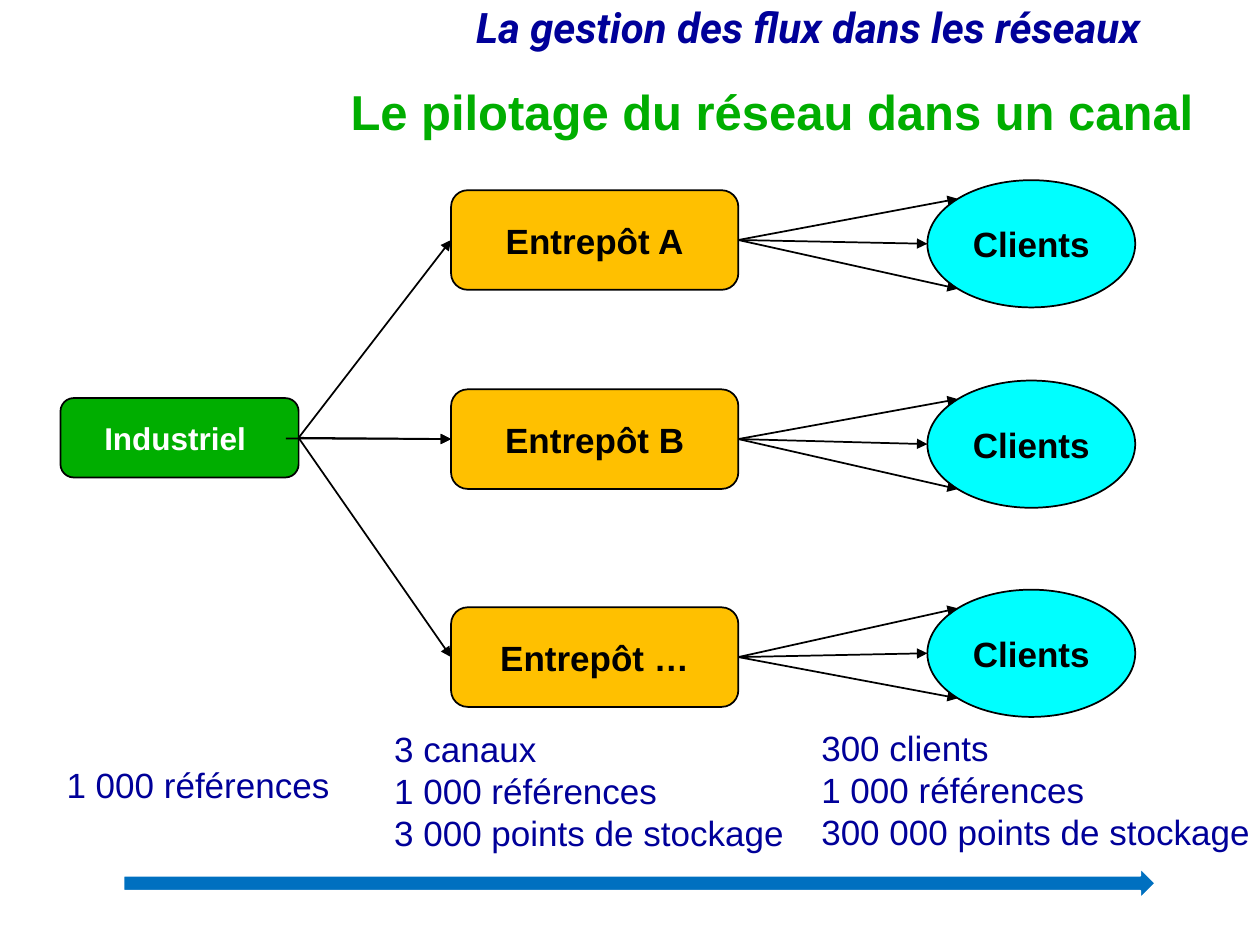
"""Build the slide on steering a distribution network within a channel."""
from dataclasses import dataclass
from math import sqrt

from lxml import etree
from pptx import Presentation
from pptx.dml.color import RGBColor
from pptx.enum.shapes import MSO_CONNECTOR, MSO_SHAPE
from pptx.enum.text import MSO_ANCHOR, PP_ALIGN
from pptx.oxml.ns import qn
from pptx.util import Inches, Pt

STRAIGHT = MSO_CONNECTOR.STRAIGHT
ROUNDED = MSO_SHAPE.ROUNDED_RECTANGLE
OVAL = MSO_SHAPE.OVAL
RIGHT_ARROW = MSO_SHAPE.RIGHT_ARROW
MIDDLE = MSO_ANCHOR.MIDDLE
LEFT, CENTER, RIGHT = PP_ALIGN.LEFT, PP_ALIGN.CENTER, PP_ALIGN.RIGHT
LEFT_SIDE, RIGHT_SIDE = 1, 3

COLORS = {
    "navy": "000099", "green": "00AE00", "amber": "FFC000", "cyan": "00FFFF",
    "blue": "0070C0", "black": "000000", "white": "FFFFFF",
}


@dataclass
class Node:
    """A filled outline with an optional centred label."""
    kind: int
    left: float
    top: float
    width: float
    height: float
    fill: str
    label: str = ""
    size: int = 20
    color: str = "black"
    line: str = "black"


@dataclass
class Caption:
    """A block of plain text, one string for each paragraph."""
    left: float
    top: float
    width: float
    height: float
    lines: tuple
    size: int = 20
    color: str = "navy"
    font: str = "Arial"
    bold: bool = False
    italic: bool = False
    align: int = LEFT
    spacing: float = 1.0
    wrap: bool = False


@dataclass
class Channel:
    """A warehouse and the customers it serves."""
    name: str
    warehouse_top: float
    customers_top: float


CHANNELS = (
    Channel("Entrepôt A", 1.51, 1.43),
    Channel("Entrepôt B", 3.09, 3.02),
    Channel("Entrepôt …", 4.82, 4.68),
)

CAPTIONS = (
    Caption(3.68, 0.01, 6.34, 0.46, ("La gestion des flux dans les réseaux",), 24,
            font="Roboto", bold=True, italic=True, spacing=0.9, wrap=True),
    Caption(0.92, 0.45, 8.65, 0.92, ("Le pilotage du réseau dans un canal",), 28,
            "green", bold=True, align=RIGHT, spacing=0.9, wrap=True),
    Caption(0.43, 6.01, 2.3, 0.44, ("1 000 références",)),
    Caption(3.03, 5.72, 3.32, 1.11,
            ("3 canaux", "1 000 références", "3 000 points de stockage")),
    Caption(6.42, 5.71, 3.63, 1.11,
            ("300 clients", "1 000 références", "300 000 points de stockage")),
)


def rgb(name: str) -> RGBColor:
    """Return the named colour."""
    return RGBColor.from_string(COLORS[name])


def style_font(font, name: str, size: int, color: str, bold: bool) -> None:
    """Set the face, size, colour and weight of a font."""
    font.name, font.size, font.bold = name, Pt(size), bold
    font.color.rgb = rgb(color)


def add_node(slide, node: Node):
    """Draw a node and return its shape."""
    shape = slide.shapes.add_shape(
        node.kind, Inches(node.left), Inches(node.top),
        Inches(node.width), Inches(node.height))
    shape.shadow.inherit = False
    shape.fill.solid()
    shape.fill.fore_color.rgb = rgb(node.fill)
    shape.line.color.rgb = rgb(node.line)
    shape.line.width = Pt(1)
    if node.label:
        shape.text_frame.vertical_anchor = MIDDLE
        paragraph = shape.text_frame.paragraphs[0]
        paragraph.text = node.label
        paragraph.alignment = CENTER
        style_font(paragraph.font, "Arial", node.size, node.color, True)
    return shape


def add_caption(slide, caption: Caption) -> None:
    """Draw a text box."""
    box = slide.shapes.add_textbox(
        Inches(caption.left), Inches(caption.top),
        Inches(caption.width), Inches(caption.height))
    frame = box.text_frame
    frame.word_wrap = caption.wrap
    frame.vertical_anchor = MIDDLE
    frame.text = "\n".join(caption.lines)
    for paragraph in frame.paragraphs:
        paragraph.alignment = caption.align
        paragraph.line_spacing = caption.spacing
        style_font(paragraph.font, caption.font, caption.size, caption.color, caption.bold)
        paragraph.font.italic = caption.italic


def add_arrow(slide, start: tuple, end: tuple):
    """Draw a thin black arrow between two points and return it."""
    connector = slide.shapes.add_connector(STRAIGHT, *start, *end)
    connector.line.color.rgb = rgb("black")
    connector.line.width = Pt(1)
    line = connector.line._get_or_add_ln()
    etree.SubElement(line, qn("a:tailEnd"), type="triangle")
    etree.SubElement(connector._element.spPr, qn("a:effectLst"))
    return connector


def right_middle(shape) -> tuple:
    """Return the middle of the right side of a shape."""
    return shape.left + shape.width, shape.top + shape.height // 2


def left_middle(shape) -> tuple:
    """Return the middle of the left side of a shape."""
    return shape.left, shape.top + shape.height // 2


def oval_targets(oval) -> list:
    """Return the upper, middle and lower points on the left of an oval."""
    inset = (1 - sqrt(0.5)) / 2
    diagonal = oval.left + int(oval.width * inset)
    drop = int(oval.height * inset)
    return [(diagonal, oval.top + drop), left_middle(oval),
            (diagonal, oval.top + oval.height - drop)]


def add_channel(slide, manufacturer, channel: Channel):
    """Draw a warehouse, its customers and the flows; return the warehouse."""
    warehouse = add_node(slide, Node(
        ROUNDED, 3.58, channel.warehouse_top, 2.28, 0.79, "amber", channel.name))
    customers = add_node(slide, Node(
        OVAL, 7.36, channel.customers_top, 1.65, 1.01, "cyan", "Clients"))
    supply = add_arrow(slide, right_middle(manufacturer), left_middle(warehouse))
    supply.begin_connect(manufacturer, RIGHT_SIDE)
    supply.end_connect(warehouse, LEFT_SIDE)
    for target in oval_targets(customers):
        delivery = add_arrow(slide, right_middle(warehouse), target)
        delivery.begin_connect(warehouse, RIGHT_SIDE)
    return warehouse


def main() -> None:
    """Build and save the presentation."""
    presentation = Presentation()
    presentation.slide_width, presentation.slide_height = Inches(10), Inches(7.5)
    slide = presentation.slides.add_slide(presentation.slide_layouts[6])
    manufacturer = add_node(slide, Node(
        ROUNDED, 0.48, 3.16, 1.89, 0.63, "green", "Industriel ", 18, "white"))
    warehouses = [add_channel(slide, manufacturer, channel) for channel in CHANNELS]
    main_flow = add_arrow(slide, (Inches(2.27), Inches(3.48)), left_middle(warehouses[1]))
    main_flow.end_connect(warehouses[1], LEFT_SIDE)
    add_node(slide, Node(RIGHT_ARROW, 0.98, 6.89, 8.19, 0.24, "blue", line="white"))
    for caption in CAPTIONS:
        add_caption(slide, caption)
    presentation.save("out.pptx")


if __name__ == "__main__":
    main()
